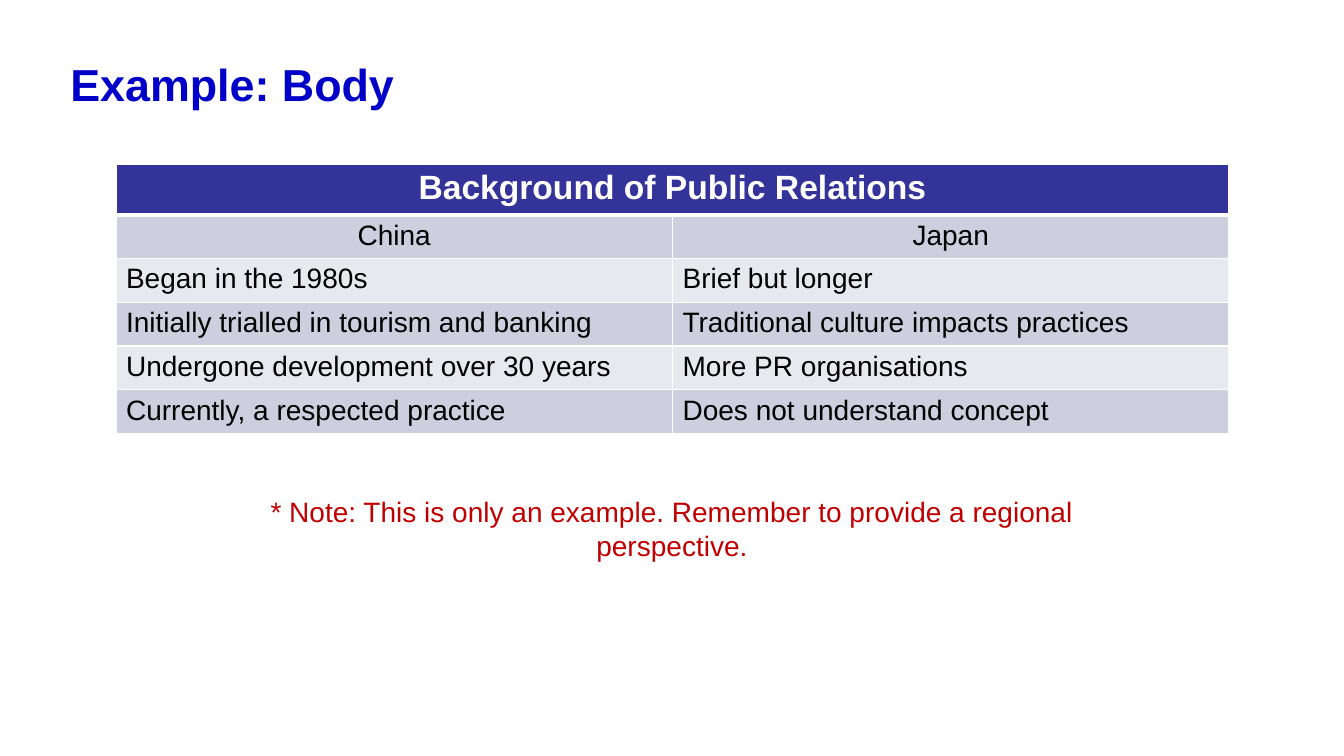
from dataclasses import dataclass

from lxml.etree import SubElement
from pptx import Presentation
from pptx.dml.color import RGBColor as Color
from pptx.enum.text import MSO_ANCHOR as Anchor, PP_ALIGN as Align
from pptx.oxml.ns import qn
from pptx.util import Inches, Pt


@dataclass(frozen=True)
class Theme:
    font: str = "Arial"
    title: str = "0000C8"
    note: str = "C00000"
    header: str = "333399"
    bands: tuple = ("CECEDE", "E8E8EF")
    white: str = "FFFFFF"
    black: str = "000000"
    title_size: int = 32
    header_size: int = 24
    body_size: int = 20


def write_text(frame, text, size, color, bold=False, align=Align.LEFT):
    frame.word_wrap = True
    paragraph = frame.paragraphs[0]
    paragraph.alignment = align
    run = paragraph.add_run()
    run.text = text
    run.font.name = THEME.font
    run.font.size = Pt(size)
    run.font.bold = bold
    run.font.color.rgb = Color.from_string(color)


class SlideBuilder:
    def __init__(self, slide, theme):
        self.slide = slide
        self.theme = theme

    def text(self, text, left, top, width, height, anchor=Anchor.TOP, **style):
        box = self.slide.shapes.add_textbox(
            Inches(left), Inches(top), Inches(width), Inches(height))
        box.text_frame.vertical_anchor = anchor
        write_text(box.text_frame, text, **style)

    def cell(self, cell, text, fill, bottom=1, **style):
        write_text(cell.text_frame, text, **style)
        self.borders(cell, bottom)
        cell.fill.solid()
        cell.fill.fore_color.rgb = Color.from_string(fill)

    def borders(self, cell, bottom):
        properties = cell._tc.get_or_add_tcPr()
        for side, width in (("L", 1), ("R", 1), ("T", 1), ("B", bottom)):
            line = SubElement(properties, qn(f"a:ln{side}"), w=str(Pt(width)))
            fill = SubElement(line, qn("a:solidFill"))
            SubElement(fill, qn("a:srgbClr"), val=self.theme.white)

    def table(self, heading, rows, left, top, width, height, row_height):
        theme = self.theme
        frame = self.slide.shapes.add_table(
            len(rows) + 1, len(rows[0]),
            Inches(left), Inches(top), Inches(width), Inches(height))
        table = frame.table
        for row in table.rows:
            row.height = Inches(row_height)
        frame.height = Inches(height)

        # Heading across all columns
        table.cell(0, 0).merge(table.cell(0, len(rows[0]) - 1))
        self.cell(table.cell(0, 0), heading, theme.header, bottom=3,
                  size=theme.header_size, color=theme.white, bold=True,
                  align=Align.CENTER)

        # Banded rows, the first one holding the country names
        for index, values in enumerate(rows):
            for column, value in enumerate(values):
                self.cell(table.cell(index + 1, column), value,
                          theme.bands[index % 2],
                          size=theme.body_size, color=theme.black,
                          align=Align.LEFT if index else Align.CENTER)


THEME = Theme()
COMPARISON = [
    ("China", "Japan"),
    ("Began in the 1980s", "Brief but longer"),
    ("Initially trialled in tourism and banking",
     "Traditional culture impacts practices"),
    ("Undergone development over 30 years", "More PR organisations"),
    ("Currently, a respected practice", "Does not understand concept"),
]


def main():
    presentation = Presentation()
    presentation.slide_width = Inches(13.33)
    presentation.slide_height = Inches(7.5)
    slide = presentation.slides.add_slide(presentation.slide_layouts[6])
    builder = SlideBuilder(slide, THEME)

    # Title
    builder.text("Example: Body", 0.6, 0.47, 12.04, 0.71, anchor=Anchor.MIDDLE,
                 size=THEME.title_size, color=THEME.title, bold=True)

    # Note below the table
    builder.text("* Note: This is only an example. "
                 "Remember to provide a regional perspective.",
                 2.53, 4.86, 8.27, 0.77, size=THEME.body_size,
                 color=THEME.note, align=Align.CENTER)

    # Comparison table
    builder.table("Background of Public Relations", COMPARISON,
                  1.15, 1.63, 11.04, 2.67, row_height=0.41)

    presentation.save("out.pptx")


if __name__ == "__main__":
    main()
